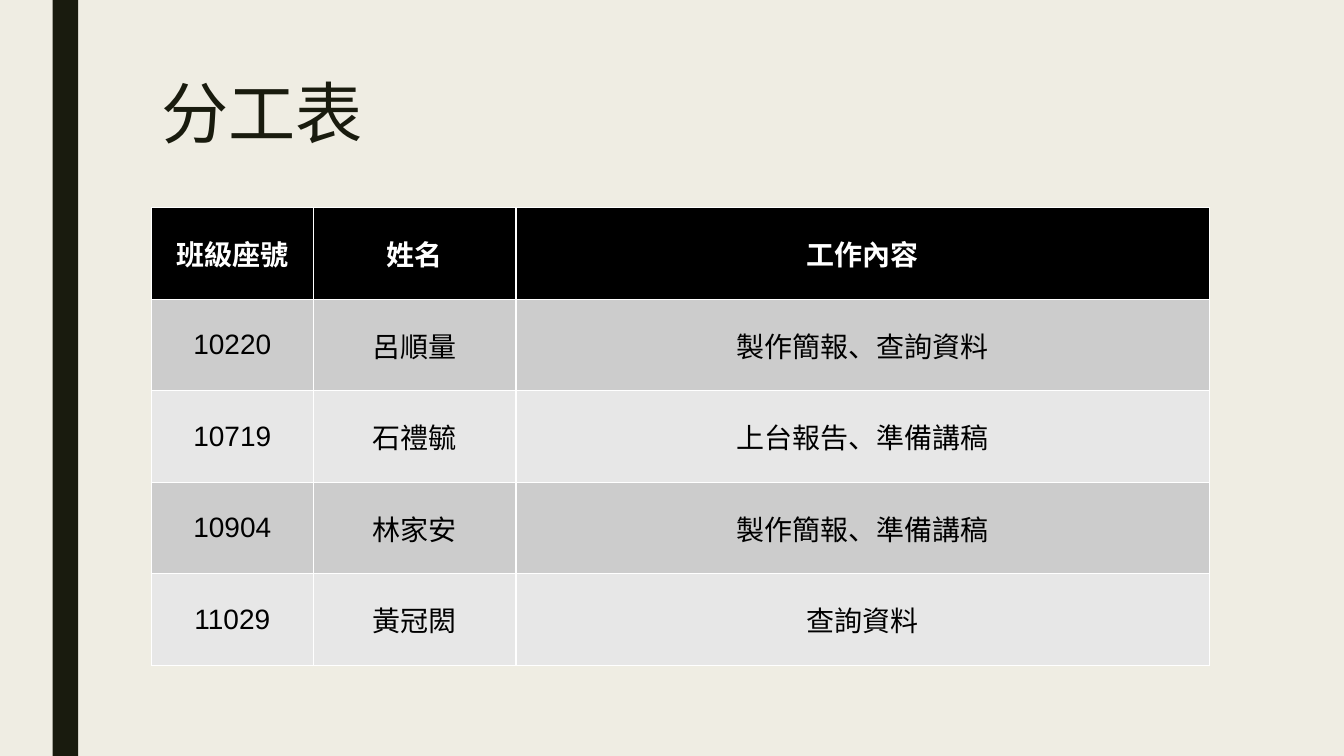
from pptx import Presentation
from pptx.dml.color import RGBColor
from pptx.enum.shapes import MSO_SHAPE
from pptx.enum.text import MSO_ANCHOR, PP_ALIGN
from pptx.util import Cm, Pt

RECTANGLE = MSO_SHAPE.RECTANGLE
TOP, MIDDLE = MSO_ANCHOR.TOP, MSO_ANCHOR.MIDDLE
LEFT, CENTER = PP_ALIGN.LEFT, PP_ALIGN.CENTER

CREAM = RGBColor(0xEF, 0xED, 0xE3)
OLIVE = RGBColor(0x19, 0x1B, 0x0E)
BLACK = RGBColor(0x00, 0x00, 0x00)
WHITE = RGBColor(0xFF, 0xFF, 0xFF)
DARK_BAND = RGBColor(0xCC, 0xCC, 0xCC)
LIGHT_BAND = RGBColor(0xE7, 0xE7, 0xE7)

TITLE_ONLY = 5
COLUMN_SHARES = (1.61, 2.01, 6.88)
DUTIES = (
    ("班級座號", "姓名", "工作內容"),
    ("10220", "呂順量", "製作簡報、查詢資料"),
    ("10719", "石禮毓", "上台報告、準備講稿"),
    ("10904", "林家安", "製作簡報、準備講稿"),
    ("11029", "黃冠閎", "查詢資料"),
)


def write_text(frame, text, *, size, font, color, bold=False, align=LEFT, spacing=None):
    """Write one formatted paragraph into a text frame."""
    para = frame.paragraphs[0]
    para.alignment = align
    para.line_spacing = spacing
    span = para.add_run()
    span.text = text
    span.font.size = Pt(size)
    span.font.name = font
    span.font.bold = bold
    span.font.color.rgb = color


def add_side_bar(page, left, top, width, height):
    """Draw the dark vertical bar in the given box."""
    bar = page.shapes.add_shape(RECTANGLE, left, top, width, height)
    bar.shadow.inherit = False
    bar.fill.solid()
    bar.fill.fore_color.rgb = OLIVE
    bar.line.fill.background()


def place_title(page, text, left, top, width, height):
    """Move the title placeholder to the given box and fill it."""
    title = page.shapes.title
    title.left, title.top, title.width, title.height = left, top, width, height
    title.text_frame.vertical_anchor = TOP
    title.text_frame.word_wrap = True
    write_text(title.text_frame, text, size=48, font="Cabin", color=OLIVE, spacing=0.89)


def add_duty_table(page, left, top, width, height):
    """Fill the given box with the table of duties."""
    table = page.shapes.add_table(
        len(DUTIES), len(COLUMN_SHARES), left, top, width, height
    ).table
    for column, share in zip(table.columns, COLUMN_SHARES):
        column.width = int(width * share / sum(COLUMN_SHARES))
    for row_index, duty in enumerate(DUTIES):
        is_header = row_index == 0
        band = DARK_BAND if row_index % 2 else LIGHT_BAND
        for column_index, text in enumerate(duty):
            cell = table.cell(row_index, column_index)
            cell.vertical_anchor = MIDDLE
            cell.fill.solid()
            cell.fill.fore_color.rgb = BLACK if is_header else band
            write_text(cell.text_frame, text, size=20, font="Arial", bold=is_header,
                       color=WHITE if is_header else BLACK, align=CENTER)


def main():
    """Build the deck with its one page and save it."""
    deck = Presentation()
    deck.slide_width, deck.slide_height = Cm(33.87), Cm(19.05)
    page = deck.slides.add_slide(deck.slide_layouts[TITLE_ONLY])
    page.background.fill.solid()
    page.background.fill.fore_color.rgb = CREAM
    left, width = Cm(3.81), Cm(26.67)
    add_side_bar(page, Cm(1.33), 0, Cm(0.64), deck.slide_height)
    place_title(page, "分工表", left, Cm(1.91), width, Cm(4.11))
    add_duty_table(page, left, Cm(5.23), width, Cm(11.54))
    deck.save("out.pptx")


if __name__ == "__main__":
    main()
